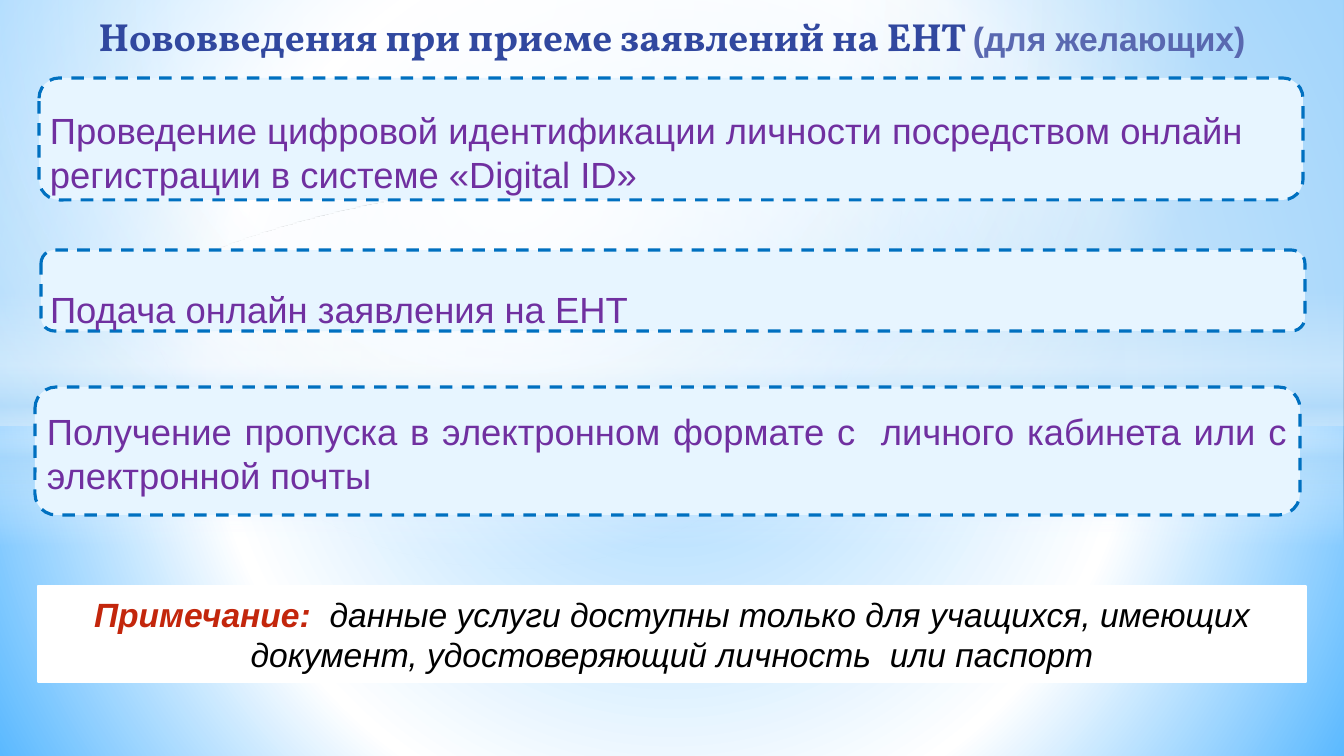
from dataclasses import dataclass
from typing import NamedTuple

from lxml import etree
from pptx import Presentation
from pptx import util as u
from pptx.dml.color import RGBColor
from pptx.enum import dml, shapes, text
from pptx.oxml import ns

PX_PER_INCH = 100.8
SLIDE_WIDTH, SLIDE_HEIGHT = 1344, 756


@dataclass(frozen=True)
class Theme:
    white: str = "FFFFFF"
    haze: str = "B4DCFA"
    sky: str = "9DD5FF"
    deep_sky: str = "5BB9FF"
    title: str = "31489F"
    subtitle: str = "5968B0"
    card: str = "E7F5FF"
    border: str = "0070C0"
    body: str = "7030A0"
    accent: str = "C3260C"
    black: str = "000000"
    title_font: str = "Vollkorn"
    body_font: str = "Arial"
    title_size: int = 28
    body_size: int = 26
    note_size: int = 24


THEME = Theme()


class Box(NamedTuple):
    left: int
    top: int
    width: int
    height: int


class Stop(NamedTuple):
    position: int
    color: str
    opacity: int = 100


class Gradient(NamedTuple):
    stops: list[Stop]
    focus: tuple[int, int, int, int] | None = None  # None: top to bottom


class Glow(NamedTuple):
    kind: shapes.MSO_SHAPE
    box: Box
    gradient: Gradient


class Run(NamedTuple):
    words: str
    size: int
    color: str
    font: str = THEME.body_font
    bold: bool = False
    italic: bool = False


class Card(NamedTuple):
    frame: Box
    words: str
    label: Box
    align: text.PP_ALIGN = text.PP_ALIGN.LEFT


def px(length: int) -> u.Emu:
    return u.Emu(round(length * 914400 / PX_PER_INCH))


def place(box: Box) -> list[u.Emu]:
    return [px(length) for length in box]


def apply_gradient(fill, holder, gradient: Gradient) -> None:
    """Set a solid fill, then swap it for the gradient in the holder element."""
    def child(parent, tag: str, **attributes):
        values = {name: str(value) for name, value in attributes.items()}
        return etree.SubElement(parent, ns.qn(tag), values)

    fill.solid()
    solid = holder.find(".//" + ns.qn("a:solidFill"))
    grad = etree.Element(ns.qn("a:gradFill"), rotWithShape="1")
    stop_list = child(grad, "a:gsLst")
    for stop in gradient.stops:
        mark = child(stop_list, "a:gs", pos=stop.position * 1000)
        color = child(mark, "a:srgbClr", val=stop.color)
        child(color, "a:alpha", val=stop.opacity * 1000)
    if gradient.focus is None:
        child(grad, "a:lin", ang=90 * 60000, scaled=0)
    else:
        sides = {side: value * 1000 for side, value in zip("ltrb", gradient.focus)}
        child(child(grad, "a:path", path="circle"), "a:fillToRect", **sides)
    solid.getparent().replace(solid, grad)


def add_plain_shape(slide, kind: shapes.MSO_SHAPE, box: Box):
    shape = slide.shapes.add_shape(kind, *place(box))
    shape.shadow.inherit = False
    return shape


def add_glow(slide, glow: Glow) -> None:
    shape = add_plain_shape(slide, glow.kind, glow.box)
    shape.line.fill.background()
    apply_gradient(shape.fill, shape._element.spPr, glow.gradient)


def add_panel(slide, kind: shapes.MSO_SHAPE, box: Box, fill: str, line: str, width: float):
    shape = add_plain_shape(slide, kind, box)
    shape.fill.solid()
    shape.fill.fore_color.rgb = RGBColor.from_string(fill)
    shape.line.color.rgb = RGBColor.from_string(line)
    shape.line.width = u.Pt(width)
    return shape


def add_text(slide, box: Box, runs: list[Run], align: text.PP_ALIGN, before: int = 0) -> None:
    frame = slide.shapes.add_textbox(*place(box)).text_frame
    frame.word_wrap = True
    frame.vertical_anchor = text.MSO_ANCHOR.MIDDLE
    frame.margin_left = frame.margin_right = px(5)
    frame.margin_top = frame.margin_bottom = px(5)
    paragraph = frame.paragraphs[0]
    paragraph.alignment = align
    paragraph.space_before = u.Pt(before)
    for item in runs:
        run = paragraph.add_run()
        run.text = item.words
        run.font.name = item.font
        run.font.size = u.Pt(item.size)
        run.font.bold = item.bold
        run.font.italic = item.italic
        run.font.color.rgb = RGBColor.from_string(item.color)


def add_card(slide, card: Card) -> None:
    shape = add_panel(slide, shapes.MSO_SHAPE.ROUNDED_RECTANGLE, card.frame,
                      THEME.card, THEME.border, 2.25)
    shape.line.dash_style = dml.MSO_LINE.DASH
    add_text(slide, card.label, [Run(card.words, THEME.body_size, THEME.body)], card.align)


WHITE, HAZE = THEME.white, THEME.haze
OFF_TOP = (38, -20, 62, 120)
BACKDROP = Gradient([Stop(0, THEME.sky), Stop(60, WHITE), Stop(100, THEME.deep_sky)],
                    (50, 50, 50, 50))
GLOWS = [
    Glow(shapes.MSO_SHAPE.RECTANGLE, Box(0, 426, SLIDE_WIDTH, 330), Gradient(
        [Stop(0, WHITE, 91), Stop(37, WHITE, 76), Stop(100, HAZE, 79)], OFF_TOP)),
    Glow(shapes.MSO_SHAPE.RECTANGLE, Box(0, 0, SLIDE_WIDTH, 426), Gradient(
        [Stop(0, WHITE, 89), Stop(48, WHITE, 62), Stop(100, HAZE, 79)], OFF_TOP)),
    Glow(shapes.MSO_SHAPE.RECTANGLE, Box(0, 292, SLIDE_WIDTH, 252), Gradient(
        [Stop(0, WHITE, 0), Stop(29, WHITE, 30), Stop(45, HAZE, 40),
         Stop(55, WHITE, 26), Stop(65, HAZE, 60), Stop(100, WHITE, 0)])),
    Glow(shapes.MSO_SHAPE.OVAL, Box(0, 176, SLIDE_WIDTH, 563), Gradient(
        [Stop(0, WHITE), Stop(54, WHITE, 0)], OFF_TOP)),
]
CARDS = [
    Card(Box(39, 78, 1264, 122),
         "Проведение цифровой идентификации личности посредством онлайн "
         "регистрации в системе «Digital ID»", Box(45, 104, 1252, 96)),
    Card(Box(41, 250, 1264, 81), "Подача онлайн заявления на ЕНТ", Box(45, 283, 1256, 52)),
    Card(Box(35, 387, 1265, 128),
         "Получение пропуска в электронном формате с  личного кабинета или с "
         "электронной почты", Box(42, 405, 1252, 96), text.PP_ALIGN.JUSTIFY),
]
TITLE = [
    Run("Нововведения при приеме заявлений на ЕНТ ", THEME.title_size, THEME.title,
        THEME.title_font, bold=True),
    Run("(для желающих)", THEME.note_size, THEME.subtitle, bold=True),
]
NOTE = [
    Run("Примечание:  ", THEME.note_size, THEME.accent, bold=True, italic=True),
    Run("данные услуги доступны только для учащихся, имеющих документ, "
        "удостоверяющий личность  или паспорт", THEME.note_size, THEME.black, italic=True),
]


def main() -> None:
    presentation = Presentation()
    presentation.slide_width, presentation.slide_height = px(SLIDE_WIDTH), px(SLIDE_HEIGHT)
    slide = presentation.slides.add_slide(presentation.slide_layouts[6])

    # Sky backdrop
    apply_gradient(slide.background.fill, slide._element, BACKDROP)
    for glow in GLOWS:
        add_glow(slide, glow)

    # Title
    add_text(slide, Box(39, 7, 1266, 57), TITLE, text.PP_ALIGN.CENTER, before=6)

    # Steps
    for card in CARDS:
        add_card(slide, card)

    # Note
    add_panel(slide, shapes.MSO_SHAPE.RECTANGLE, Box(38, 586, 1268, 96), WHITE, WHITE, 1.25)
    add_text(slide, Box(38, 590, 1268, 88), NOTE, text.PP_ALIGN.CENTER)

    presentation.save("out.pptx")


if __name__ == "__main__":
    main()
